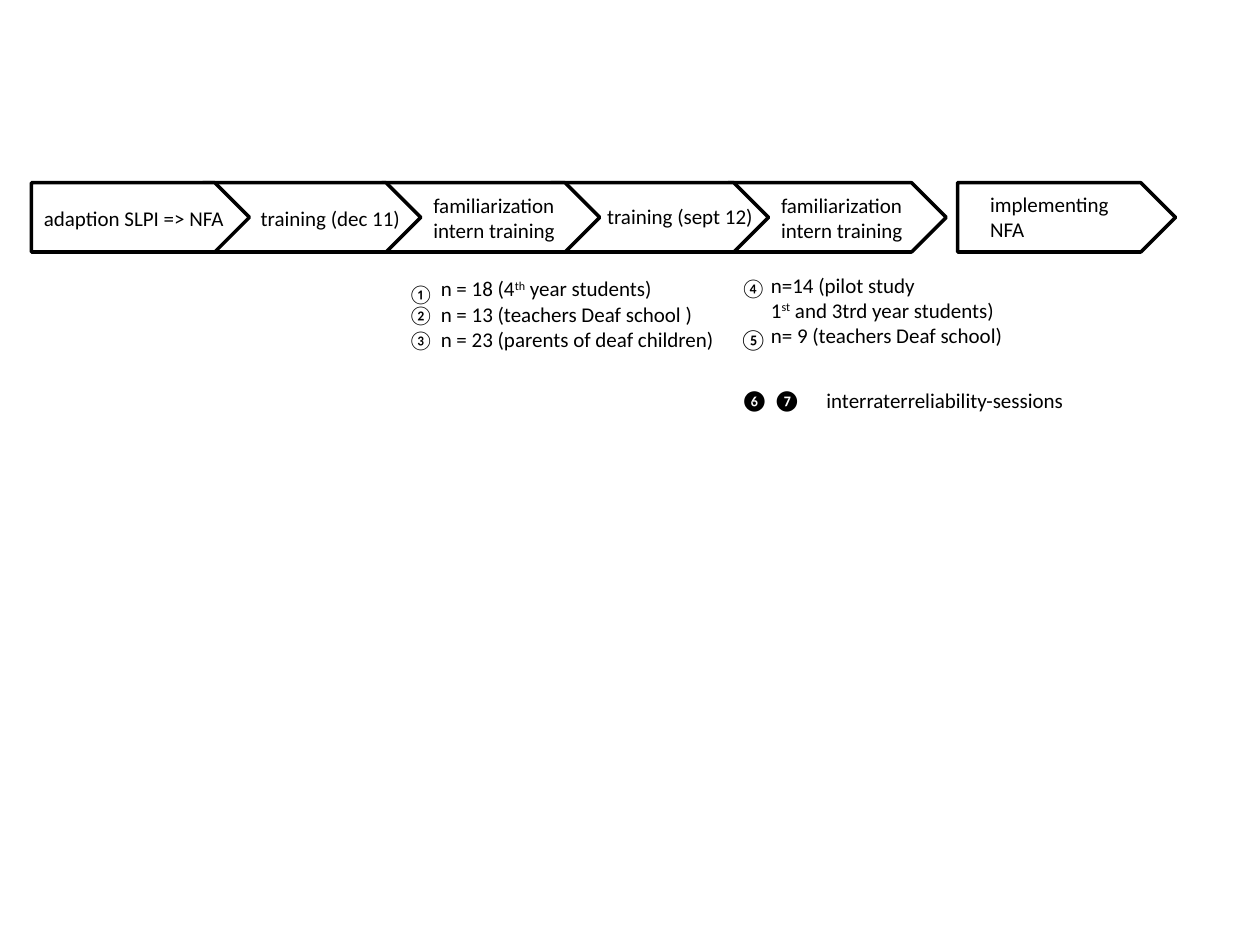
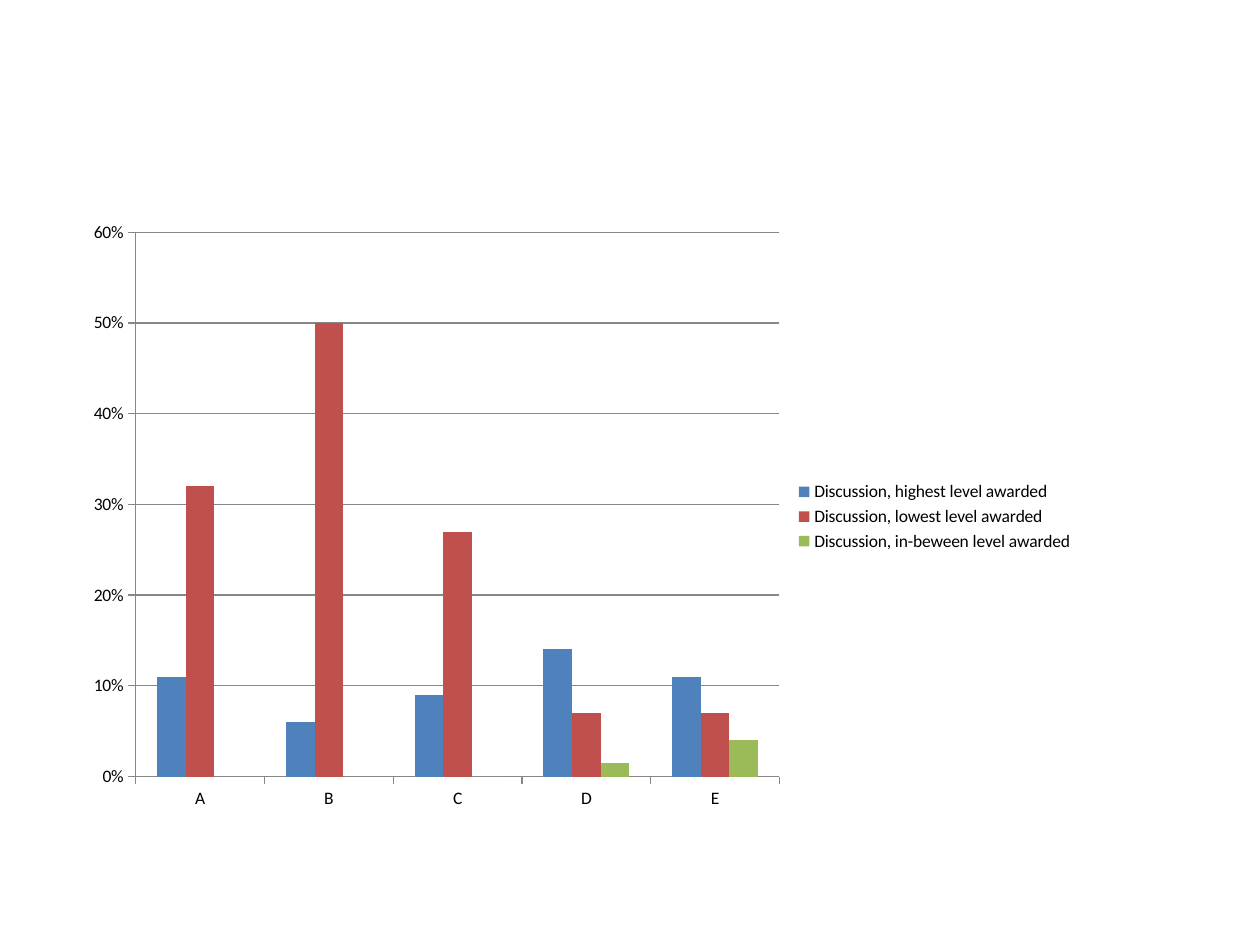
from dataclasses import dataclass

from lxml import etree
from pptx import Presentation
from pptx import util as u
from pptx.chart.data import CategoryChartData
from pptx.dml.color import RGBColor
from pptx.enum import chart as charts, shapes, text
from pptx.oxml import ns


@dataclass(frozen=True)
class Theme:
    font: str = "Calibri"
    ink: RGBColor = RGBColor(0, 0, 0)
    paper: RGBColor = RGBColor(255, 255, 255)
    axis: RGBColor = RGBColor.from_string("878787")
    series: tuple = ("4F81BD", "C0504D", "9BBB59")
    body: int = 12
    marker: int = 11
    chart: int = 10
    outline: float = 2
    axis_width: float = 0.75


def apply(target, values):
    for name, value in values.items():
        setattr(target, name, value)


class Deck:
    def __init__(self, theme):
        self.theme = theme
        self.presentation = Presentation()
        apply(self.presentation, {"slide_width": u.Inches(10), "slide_height": u.Inches(7.5)})
        self.slide = None

    def add_slide(self):
        self.slide = self.presentation.slides.add_slide(self.presentation.slide_layouts[6])

    def style_font(self, font, size):
        apply(font, {"name": self.theme.font, "size": u.Pt(size)})
        font.color.rgb = self.theme.ink

    def add_stage(self, left, top, width, height):
        shape = self.slide.shapes.add_shape(
            shapes.MSO_SHAPE.PENTAGON, *map(u.Inches, (left, top, width, height)))
        shape.shadow.inherit = False
        shape.fill.solid()
        shape.fill.fore_color.rgb = self.theme.paper
        shape.line.color.rgb = self.theme.ink
        shape.line.width = u.Pt(self.theme.outline)

    def add_text(self, left, top, width, height, lines, size=None):
        box = self.slide.shapes.add_textbox(*map(u.Inches, (left, top, width, height)))
        frame = box.text_frame
        apply(frame, {"word_wrap": False, "auto_size": text.MSO_AUTO_SIZE.SHAPE_TO_FIT_TEXT})
        for number, line in enumerate(lines):
            paragraph = frame.add_paragraph() if number else frame.paragraphs[0]
            for position, part in enumerate(line.split("^")):
                run = paragraph.add_run()
                run.text = part
                self.style_font(run.font, size or self.theme.body)
                if position % 2:
                    run._r.get_or_add_rPr().set("baseline", "30000")

    def style_line(self, line):
        line.color.rgb = self.theme.axis
        line.width = u.Pt(self.theme.axis_width)

    def place_plot(self, chart, x, y, w, h):
        plot_area = chart._chartSpace.chart.plotArea
        for old in plot_area.findall(ns.qn("c:layout")):
            plot_area.remove(old)
        layout = etree.Element(ns.qn("c:layout"))
        manual = etree.SubElement(layout, ns.qn("c:manualLayout"))
        settings = {"layoutTarget": "inner", "xMode": "edge", "yMode": "edge",
                    "x": x, "y": y, "w": w, "h": h}
        for name, value in settings.items():
            etree.SubElement(manual, ns.qn(f"c:{name}")).set("val", str(value))
        plot_area.insert(0, layout)

    def add_column_chart(self, left, top, width, height, categories, series, plot_box):
        data = CategoryChartData(number_format="0%")
        data.categories = categories
        for name, values in series.items():
            data.add_series(name, values)
        chart = self.slide.shapes.add_chart(
            charts.XL_CHART_TYPE.COLUMN_CLUSTERED,
            *map(u.Inches, (left, top, width, height)), data).chart
        apply(chart, {"has_title": False, "has_legend": True})
        self.style_font(chart.font, self.theme.chart)
        apply(chart.legend, {"position": charts.XL_LEGEND_POSITION.RIGHT,
                             "include_in_layout": False})
        plot = chart.plots[0]
        apply(plot, {"gap_width": 150, "overlap": 0, "vary_by_categories": False})
        for column, color in zip(plot.series, self.theme.series):
            column.invert_if_negative = False
            column.format.fill.solid()
            column.format.fill.fore_color.rgb = RGBColor.from_string(color)
        for axis in (chart.category_axis, chart.value_axis):
            axis.major_tick_mark = charts.XL_TICK_MARK.OUTSIDE
            self.style_line(axis.format.line)
        apply(chart.value_axis, {"minimum_scale": 0, "maximum_scale": 0.6, "major_unit": 0.1,
                                 "has_major_gridlines": True})
        self.style_line(chart.value_axis.major_gridlines.format.line)
        apply(chart.value_axis.tick_labels,
              {"number_format": "0%", "number_format_is_linked": False})
        self.place_plot(chart, *plot_box)


def build_timeline(deck):
    deck.add_slide()
    for left in (5.78, 4.37, 3.03, 1.61, 0.25, 7.6):
        deck.add_stage(left, 1.45, 1.73, 0.55)

    familiarization = ["familiarization", "intern training"]
    stage_labels = [
        (0.25, 1.58, 1.65, 0.3, ["adaption SLPI => NFA"]),
        (1.97, 1.58, 1.32, 0.3, ["training (dec 11)"]),
        (3.34, 1.48, 1.21, 0.5, familiarization),
        (4.72, 1.57, 1.37, 0.3, ["training (sept 12)"]),
        (6.1, 1.48, 1.21, 0.5, familiarization),
        (7.76, 1.47, 1.15, 0.5, ["implementing", "NFA"]),
    ]
    group_notes = [
        (3.4, 2.14, 2.37, 0.71, ["n = 18 (4^th^ year students)",
                                 "n = 13 (teachers Deaf school )",
                                 "n = 23 (parents of deaf children)"]),
        (6.02, 2.11, 2.06, 0.71, ["n=14 (pilot study",
                                  "1^st^ and 3trd year students)",
                                  "n= 9 (teachers Deaf school)"]),
        (5.78, 3.03, 0.69, 0.3, ["❻ ❼"]),
        (6.46, 3.03, 2.11, 0.3, ["interraterreliability-sessions"]),
        (5.77, 2.54, 0.43, 0.3, ["⑤"]),
    ]
    for label in stage_labels + group_notes:
        deck.add_text(*label)

    for left, top, marker in ((3.14, 2.19, "①"), (3.14, 2.36, "②"),
                              (3.14, 2.56, "③"), (5.78, 2.14, "④")):
        deck.add_text(left, top, 0.41, 0.29, [marker], deck.theme.marker)


def build_discussion_chart(deck):
    deck.add_slide()
    discussions = {
        "Discussion, highest level awarded": (0.11, 0.06, 0.09, 0.14, 0.11),
        "Discussion, lowest level awarded": (0.32, 0.5, 0.27, 0.07, 0.07),
        "Discussion, in-beween level awarded": (None, None, 0, 0.015, 0.04),
    }
    deck.add_column_chart(0.51, 1.7, 8.11, 4.8, list("ABCDE"), discussions,
                          (0.07, 0.03, 0.63, 0.9))


def main():
    deck = Deck(Theme())
    build_timeline(deck)
    build_discussion_chart(deck)
    deck.presentation.save("out.pptx")


if __name__ == "__main__":
    main()
